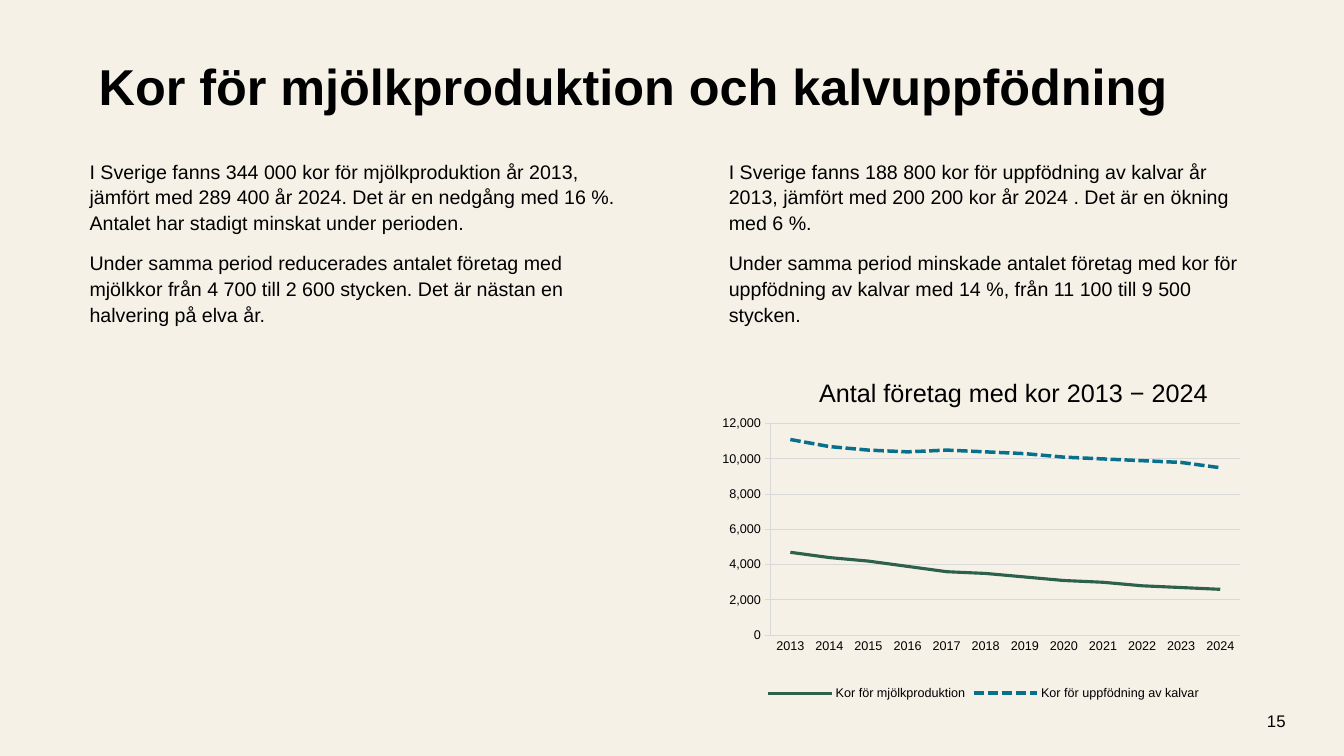
from lxml import etree
from pptx import Presentation
from pptx.chart.data import CategoryChartData
from pptx.dml.color import RGBColor
from pptx.enum.chart import XL_CHART_TYPE, XL_LEGEND_POSITION, XL_TICK_MARK
from pptx.enum.dml import MSO_LINE
from pptx.enum.text import MSO_ANCHOR, PP_ALIGN
from pptx.oxml import parse_xml
from pptx.oxml.ns import nsdecls, qn
from pptx.util import Inches, Pt

LINE_CHART = XL_CHART_TYPE.LINE
LEGEND_BOTTOM = XL_LEGEND_POSITION.BOTTOM
TICK_NONE, TICK_OUT = XL_TICK_MARK.NONE, XL_TICK_MARK.OUTSIDE
SOLID, DASHED = MSO_LINE.SOLID, MSO_LINE.SQUARE_DOT
TOP, MIDDLE, BOTTOM = MSO_ANCHOR.TOP, MSO_ANCHOR.MIDDLE, MSO_ANCHOR.BOTTOM
LEFT, RIGHT = PP_ALIGN.LEFT, PP_ALIGN.RIGHT

FONT = "Arial"
BLACK = RGBColor(0x00, 0x00, 0x00)
CREAM = RGBColor(0xF5, 0xF1, 0xE7)
GRID_GREY = RGBColor(0xD9, 0xD9, 0xD9)
GREEN = RGBColor(0x2E, 0x61, 0x4C)
TEAL = RGBColor(0x07, 0x70, 0x8C)

TITLE = "Kor för mjölkproduktion och kalvuppfödning"
PAGE_NUMBER = "15"
MILK_TEXT = [
    "I Sverige fanns 344 000 kor för mjölkproduktion år 2013, jämfört med 289 400 år 2024. "
    "Det är en nedgång med 16 %. Antalet har stadigt minskat under perioden.",
    "Under samma period reducerades antalet företag med mjölkkor från 4 700 till 2 600 stycken. "
    "Det är nästan en halvering på elva år.",
]
CALF_TEXT = [
    "I Sverige fanns 188 800 kor för uppfödning av kalvar år 2013, jämfört med 200 200 kor "
    "år 2024 . Det är en ökning med 6 %.",
    "Under samma period minskade antalet företag med kor för uppfödning av kalvar med 14 %, "
    "från 11 100 till 9 500 stycken.",
]
CHART_TITLE = "Antal företag med kor 2013 − 2024"
YEARS = [str(year) for year in range(2013, 2025)]
# name, values, colour, line width, dash
SERIES = [
    ("Kor för mjölkproduktion",
     [4700, 4400, 4200, 3900, 3600, 3500, 3300, 3100, 3000, 2800, 2700, 2600],
     GREEN, 2.25, SOLID),
    ("Kor för uppfödning av kalvar",
     [11100, 10700, 10500, 10400, 10500, 10400, 10300, 10100, 10000, 9900, 9800, 9500],
     TEAL, 2.5, DASHED),
]


def style_font(font, size, bold=False):
    font.name, font.size, font.bold = FONT, Pt(size), bold
    font.color.rgb = BLACK


def add_text(page, place, texts, size, bold=False, spacing=1.0, anchor=TOP, align=LEFT):
    box = page.shapes.add_textbox(*map(Inches, place))
    frame = box.text_frame
    frame.word_wrap = True
    frame.vertical_anchor = anchor
    for index, text in enumerate(texts):
        para = frame.paragraphs[0] if index == 0 else frame.add_paragraph()
        para.alignment = align
        para.line_spacing = spacing
        if index:
            para.space_before = Pt(10)
        span = para.add_run()
        span.text = text
        style_font(span.font, size, bold)


def manual_layout(inner=False, **fractions):
    """Return a c:layout element placing a chart part by fractions of the chart."""
    layout = parse_xml(f"<c:layout {nsdecls('c')}><c:manualLayout/></c:layout>")
    settings = {"layoutTarget": "inner"} if inner else {}
    settings.update(xMode="edge", yMode="edge", **fractions)
    for name, value in settings.items():
        etree.SubElement(layout[0], qn(f"c:{name}")).set("val", str(value))
    return layout


def replace_layout(parent, layout, position):
    for old in parent.findall(qn("c:layout")):
        parent.remove(old)
    parent.insert(position, layout)


def style_line(line, colour, width, dash=SOLID):
    line.color.rgb = colour
    line.width = Pt(width)
    line.dash_style = dash


def add_company_chart(page):
    data = CategoryChartData(number_format="#,##0")
    data.categories = YEARS
    for name, values, *_ in SERIES:
        data.add_series(name, values)
    place = map(Inches, (7.05, 3.55, 5.41, 3.44))
    chart = page.shapes.add_chart(LINE_CHART, *place, data).chart
    style_font(chart.font, 8)

    chart.has_title = True
    title = chart.chart_title
    span = title.text_frame.paragraphs[0].add_run()
    span.text = CHART_TITLE
    style_font(span.font, 18)
    title.include_in_layout = False
    replace_layout(title._element, manual_layout(x=0.19, y=0.04), 1)

    chart.has_legend = True
    chart.legend.position = LEGEND_BOTTOM
    chart.legend.include_in_layout = False
    style_font(chart.legend.font, 9)

    for axis, tick in ((chart.category_axis, TICK_NONE), (chart.value_axis, TICK_OUT)):
        axis.major_tick_mark = tick
        axis.minor_tick_mark = TICK_NONE
        style_font(axis.tick_labels.font, 9)
        style_line(axis.format.line, GRID_GREY, 0.75)
    values = chart.value_axis
    values.minimum_scale, values.maximum_scale, values.major_unit = 0, 12000, 2000
    values.tick_labels.number_format = "#,##0"
    values.tick_labels.number_format_is_linked = False
    style_line(values.major_gridlines.format.line, GRID_GREY, 0.75)

    plot = chart.plots[0]
    plot.vary_by_categories = False
    for series, (_, _, colour, width, dash) in zip(plot.series, SERIES):
        series.smooth = False
        style_line(series.format.line, colour, width, dash)

    plot_area = chart._chartSpace.chart.plotArea
    replace_layout(plot_area, manual_layout(inner=True, x=0.11, y=0.19, w=0.86, h=0.61), 0)
    fill = parse_xml(
        f"<c:spPr {nsdecls('c', 'a')}><a:solidFill><a:srgbClr val='{CREAM}'/></a:solidFill>"
        "<a:ln><a:noFill/></a:ln></c:spPr>")
    chart._chartSpace.chart.addnext(fill)


def main():
    deck = Presentation()
    deck.slide_width, deck.slide_height = Inches(13.33), Inches(7.5)
    page = deck.slides.add_slide(deck.slide_layouts[6])
    page.background.fill.solid()
    page.background.fill.fore_color.rgb = CREAM

    add_text(page, (0.88, 0.52, 10.82, 0.68), [TITLE], 36, True, 0.9, BOTTOM)
    add_text(page, (11.69, 6.95, 1.16, 0.4), [PAGE_NUMBER], 12, anchor=MIDDLE, align=RIGHT)
    add_text(page, (0.79, 1.51, 5.53, 1.93), MILK_TEXT, 14, spacing=1.1)
    add_text(page, (7.13, 1.51, 5.41, 2.12), CALF_TEXT, 14, spacing=1.1)
    add_company_chart(page)
    deck.save("out.pptx")


if __name__ == "__main__":
    main()
